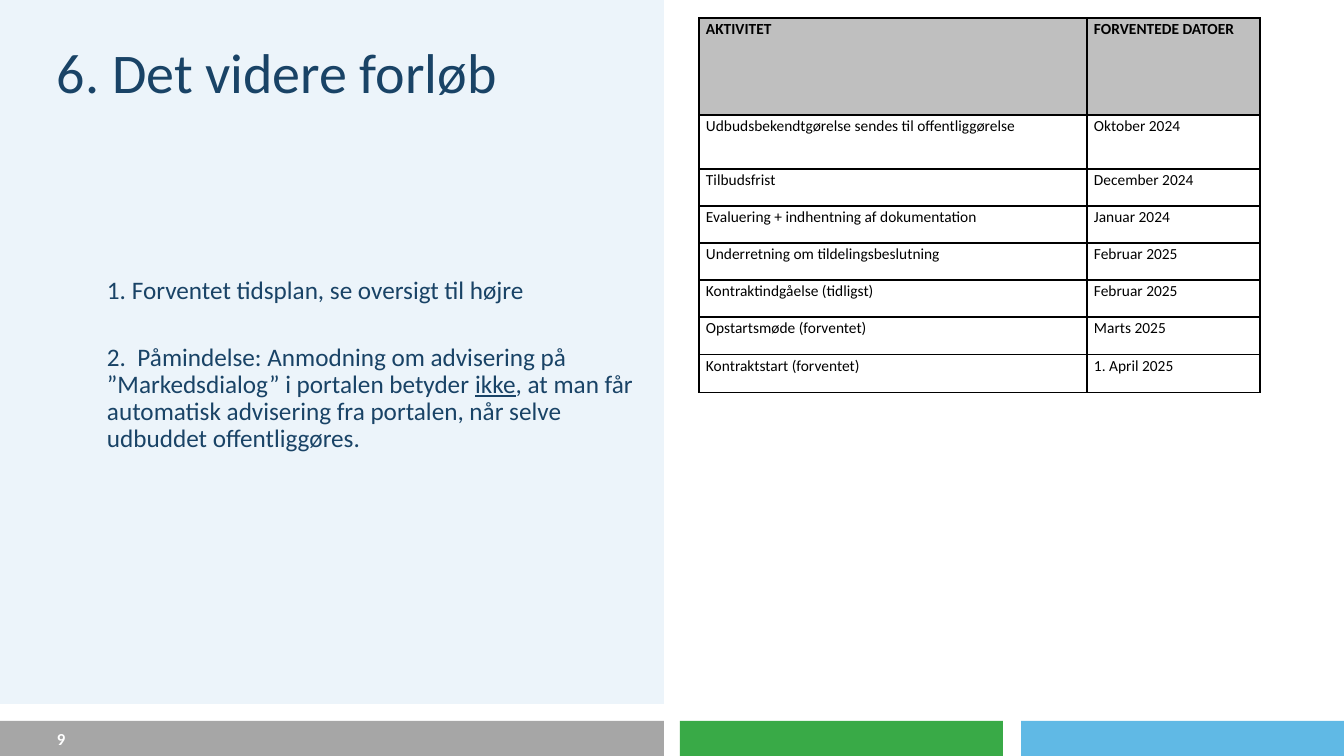
from lxml.etree import SubElement
from pptx import Presentation
from pptx.dml.color import RGBColor
from pptx.enum.shapes import MSO_SHAPE
from pptx.enum.text import MSO_ANCHOR, MSO_AUTO_SIZE, PP_ALIGN
from pptx.oxml.ns import qn
from pptx.util import Inches, Pt

SCALE = Inches(7.5) / 756
FONT = "Calibri"
COLORS = {
    "navy": "194366",
    "panel": "C1DBF0",
    "gray": "A6A6A6",
    "green": "39AA47",
    "blue": "60B9E5",
    "header": "BFBFBF",
    "black": "000000",
    "white": "FFFFFF",
}
SCHEDULE = [
    ("AKTIVITET", "FORVENTEDE DATOER"),
    ("Udbudsbekendtgørelse sendes til offentliggørelse", "Oktober 2024"),
    ("Tilbudsfrist", "December 2024"),
    ("Evaluering + indhentning af dokumentation", "Januar 2024"),
    ("Underretning om tildelingsbeslutning", "Februar 2025"),
    ("Kontraktindgåelse (tidligst)", "Februar 2025"),
    ("Opstartsmøde (forventet)", "Marts 2025"),
    ("Kontraktstart (forventet)", "1. April 2025"),
]
COLUMN_WIDTHS = [388, 173]
ROW_HEIGHTS = [97, 54] + [37] * 4 + [38] * 2
NOTES = [
    [("1. Forventet tidsplan, se oversigt til højre", False)],
    [
        ("2.  Påmindelse: Anmodning om advisering på ”Markedsdialog” i portalen betyder ", False),
        ("ikke", True),
        (", at man får automatisk advisering fra portalen, når selve udbuddet offentliggøres.", False),
    ],
]


def px(length):
    return round(length * SCALE)


def color(name):
    return RGBColor.from_string(COLORS[name])


def style(paragraph, size, name, bold=False):
    paragraph.font.name = FONT
    paragraph.font.size = Pt(size)
    paragraph.font.bold = bold
    paragraph.font.color.rgb = color(name)


def prepare_frame(frame, anchor=MSO_ANCHOR.TOP):
    frame.margin_left = frame.margin_right = 0
    frame.margin_top = frame.margin_bottom = 0
    frame.word_wrap = True
    frame.auto_size = MSO_AUTO_SIZE.NONE
    frame.vertical_anchor = anchor


def place(shape, left, top, width, height):
    shape.left, shape.top = px(left), px(top)
    shape.width, shape.height = px(width), px(height)


def add_block(slide, box, name):
    block = slide.shapes.add_shape(MSO_SHAPE.RECTANGLE, *map(px, box))
    block.shadow.inherit = False
    block.fill.solid()
    block.fill.fore_color.rgb = color(name)
    block.line.fill.background()
    return block


def add_panel(slide, box):
    panel = add_block(slide, box, "panel")
    tint = panel.fill._xPr.find(qn("a:solidFill"))[0]
    SubElement(tint, qn("a:alpha"), val="30000")


def add_footer(slide, left, top, width, height):
    for offset, span, name in [(0, 664, "gray"), (680, 323, "green"), (1021, 323, "blue")]:
        add_block(slide, (left + offset, top, min(span, width - offset), height), name)
    number = slide.shapes.add_textbox(px(left + 57), px(top), px(65), px(height))
    prepare_frame(number.text_frame, MSO_ANCHOR.MIDDLE)
    paragraph = number.text_frame.paragraphs[0]
    paragraph.text = "9"
    style(paragraph, 12, "white", bold=True)


def fill_title(title, box):
    place(title, *box)
    prepare_frame(title.text_frame)
    paragraph = title.text_frame.paragraphs[0]
    paragraph.text = "6. Det videre forløb"
    paragraph.alignment = PP_ALIGN.LEFT
    paragraph.line_spacing = 0.9
    style(paragraph, 40, "navy")


def fill_notes(body, box):
    place(body, *box)
    frame = body.text_frame
    prepare_frame(frame)
    for index, note in enumerate(NOTES):
        paragraph = frame.add_paragraph() if index else frame.paragraphs[0]
        properties = paragraph._p.get_or_add_pPr()
        properties.set("marL", str(px(50)))
        properties.set("indent", "0")
        SubElement(properties, qn("a:buNone"))
        paragraph.line_spacing = 0.9
        paragraph.space_before = Pt(28 if index else 0)
        paragraph.space_after = Pt(0)
        style(paragraph, 18, "navy")
        for words, underlined in note:
            run = paragraph.add_run()
            run.text = words
            if underlined:
                run.font.underline = True


def add_borders(cell):
    properties = cell._tc.get_or_add_tcPr()
    for side in ("lnL", "lnR", "lnT", "lnB"):
        border = SubElement(properties, qn(f"a:{side}"), w=str(Pt(1)))
        paint = SubElement(border, qn("a:solidFill"))
        SubElement(paint, qn("a:srgbClr"), val=COLORS["black"])


def add_schedule(slide, left, top):
    box = (left, top, sum(COLUMN_WIDTHS), sum(ROW_HEIGHTS))
    schedule = slide.shapes.add_table(len(SCHEDULE), len(COLUMN_WIDTHS), *map(px, box)).table
    schedule.first_row = schedule.horz_banding = False
    for column, width in zip(schedule.columns, COLUMN_WIDTHS):
        column.width = px(width)
    for row_index, entries in enumerate(SCHEDULE):
        schedule.rows[row_index].height = px(ROW_HEIGHTS[row_index])
        is_header = row_index == 0
        for column_index, entry in enumerate(entries):
            cell = schedule.cell(row_index, column_index)
            add_borders(cell)
            cell.margin_left = cell.margin_right = px(7)
            cell.margin_top = cell.margin_bottom = 0
            cell.vertical_anchor = MSO_ANCHOR.TOP
            if is_header:
                cell.fill.solid()
                cell.fill.fore_color.rgb = color("header")
            else:
                cell.fill.background()
            paragraph = cell.text_frame.paragraphs[0]
            paragraph.text = entry
            paragraph.line_spacing = 1.07
            paragraph.space_after = Pt(8)
            style(paragraph, 11, "black", bold=is_header)


def build_timeline_slide(presentation):
    slide = presentation.slides.add_slide(presentation.slide_layouts[1])
    title, body = slide.shapes.title, slide.placeholders[1]
    add_footer(slide, 0, 721, 1344, 35)
    add_panel(slide, (0, 0, 664, 704))
    for placeholder in (title, body):
        slide.shapes._spTree.append(placeholder._element)
    fill_title(title, (57, 45, 587, 131))
    fill_notes(body, (57, 278, 587, 378))
    add_schedule(slide, 699, 18)


def main():
    presentation = Presentation()
    presentation.slide_width, presentation.slide_height = px(1344), px(756)
    build_timeline_slide(presentation)
    presentation.save("out.pptx")


if __name__ == "__main__":
    main()
